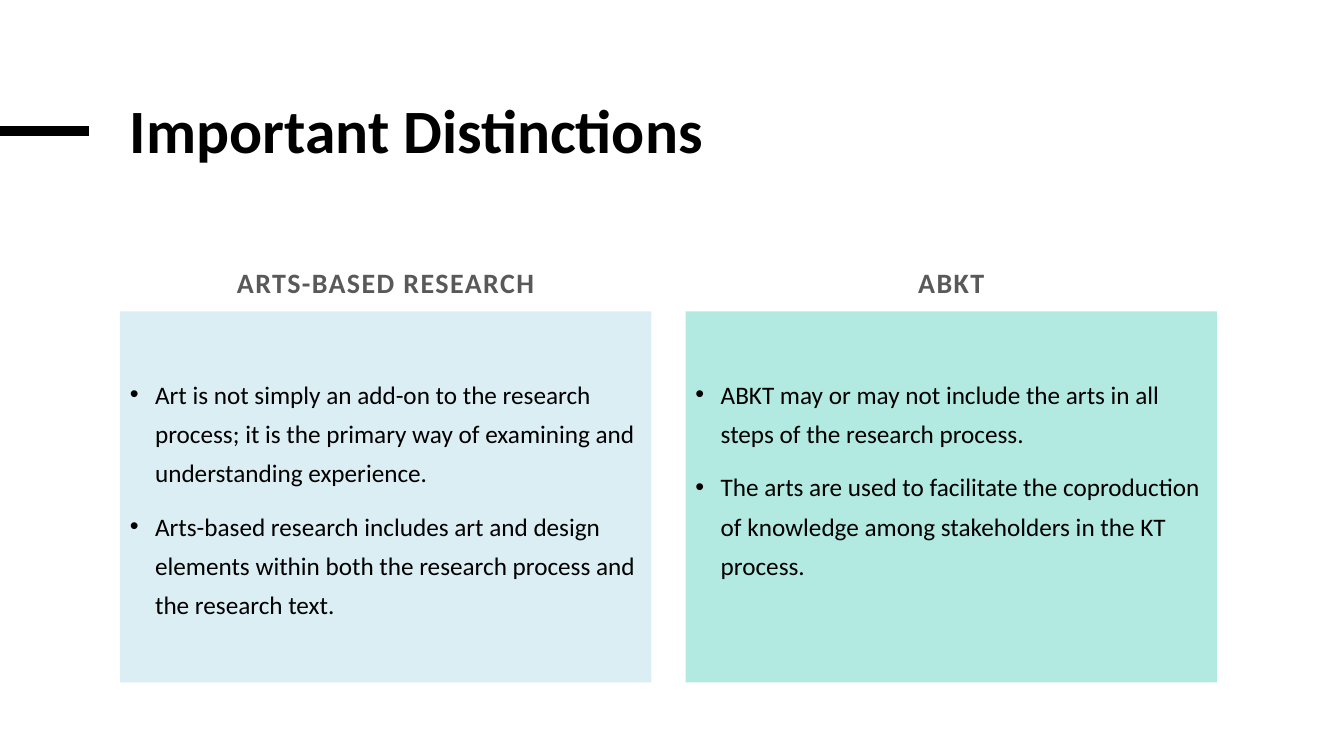
import pptx
import pptx.dml.color
import pptx.enum.shapes
import pptx.enum.text
import pptx.oxml.ns
import pptx.util
from lxml import etree

Inches = pptx.util.Inches
Pt = pptx.util.Pt
ALIGN = pptx.enum.text.PP_ALIGN
ANCHOR = pptx.enum.text.MSO_ANCHOR
qn = pptx.oxml.ns.qn


def color(value):
    return pptx.dml.color.RGBColor.from_string(value)


def apply(target, values):
    for name, value in values.items():
        setattr(target, name, value)


class SlideBuilder:
    """Draws styled elements on the current slide."""

    title_font = {"name": "Calibri", "size": Pt(44), "bold": True}
    heading_font = {"name": "Calibri", "size": Pt(20), "bold": True}
    body_font = {"name": "Calibri", "size": Pt(18), "bold": False}

    def __init__(self, slide):
        self.slide = slide

    def add_text(self, paragraph, text, font, ink, layout):
        run = paragraph.add_run()
        run.text = text
        apply(run.font, font)
        run.font.color.rgb = color(ink)
        apply(paragraph, layout)
        return run

    def text_box(self, left, top, width, height, anchor):
        shape = self.slide.shapes.add_textbox(
            Inches(left), Inches(top), Inches(width), Inches(height))
        apply(shape.text_frame, {"word_wrap": True, "vertical_anchor": anchor})
        return shape.text_frame.paragraphs[0]

    def accent_line(self, start, end, y, weight):
        connector = self.slide.shapes.add_connector(
            pptx.enum.shapes.MSO_CONNECTOR.STRAIGHT,
            Inches(start), Inches(y), Inches(end), Inches(y))
        connector.line.color.rgb = color("000000")
        connector.line.width = Pt(weight)
        etree.SubElement(connector._element.spPr, qn("a:effectLst"))

    def title(self, text, left, top, width, height):
        paragraph = self.text_box(left, top, width, height, ANCHOR.TOP)
        self.add_text(paragraph, text, self.title_font, "000000",
                      {"line_spacing": 0.85})

    def heading(self, text, left, top, width, height):
        paragraph = self.text_box(left, top, width, height, ANCHOR.BOTTOM)
        run = self.add_text(paragraph, text, self.heading_font, "595959",
                            {"alignment": ALIGN.CENTER})
        run._r.get_or_add_rPr().set("spc", "100")

    def bullet_panel(self, points, fill, left, top, width, height):
        shape = self.slide.shapes.add_shape(
            pptx.enum.shapes.MSO_SHAPE.RECTANGLE,
            Inches(left), Inches(top), Inches(width), Inches(height))
        shape.shadow.inherit = False
        shape.fill.solid()
        shape.fill.fore_color.rgb = color(fill)
        shape.line.fill.background()
        frame = shape.text_frame
        apply(frame, {"word_wrap": True, "vertical_anchor": ANCHOR.TOP,
                      "margin_top": Inches(0.58)})
        for index, point in enumerate(points):
            paragraph = frame.add_paragraph() if index else frame.paragraphs[0]
            self.add_text(paragraph, point, self.body_font, "000000",
                          {"alignment": ALIGN.LEFT, "line_spacing": 1.3,
                           "space_before": Pt(10 if index else 0)})
            properties = paragraph._p.get_or_add_pPr()
            properties.set("marL", str(Inches(0.25)))
            properties.set("indent", str(Inches(-0.25)))
            etree.SubElement(properties, qn("a:buFont"), typeface="Arial")
            etree.SubElement(properties, qn("a:buChar"), char="•")


COLUMNS = [
    ("ARTS-BASED RESEARCH", "DBEEF4", [
        "Art is not simply an add-on to the research process; it is the "
        "primary way of examining and understanding experience.",
        "Arts-based research includes art and design elements within both "
        "the research process and the research text.",
    ]),
    ("ABKT", "B2E9E0", [
        "ABKT may or may not include the arts in all steps of the research "
        "process.",
        "The arts are used to facilitate the coproduction of knowledge among "
        "stakeholders in the KT process.",
    ]),
]


def main():
    presentation = pptx.Presentation()
    apply(presentation, {"slide_width": Inches(13.33),
                         "slide_height": Inches(7.5)})
    slide = presentation.slides.add_slide(presentation.slide_layouts[6])
    builder = SlideBuilder(slide)
    margin, column_width, pitch = 1.19, 5.27, 5.61
    builder.accent_line(0, 0.88, 1.3, 6.75)
    builder.title("Important Distinctions", margin, 0.98, 10.88, 0.92)
    for index, (heading, fill, points) in enumerate(COLUMNS):
        left = margin + index * pitch
        builder.heading(heading, left, 2.1, column_width, 0.92)
        builder.bullet_panel(points, fill, left, 3.09, column_width, 3.68)
    presentation.save("out.pptx")


if __name__ == "__main__":
    main()
